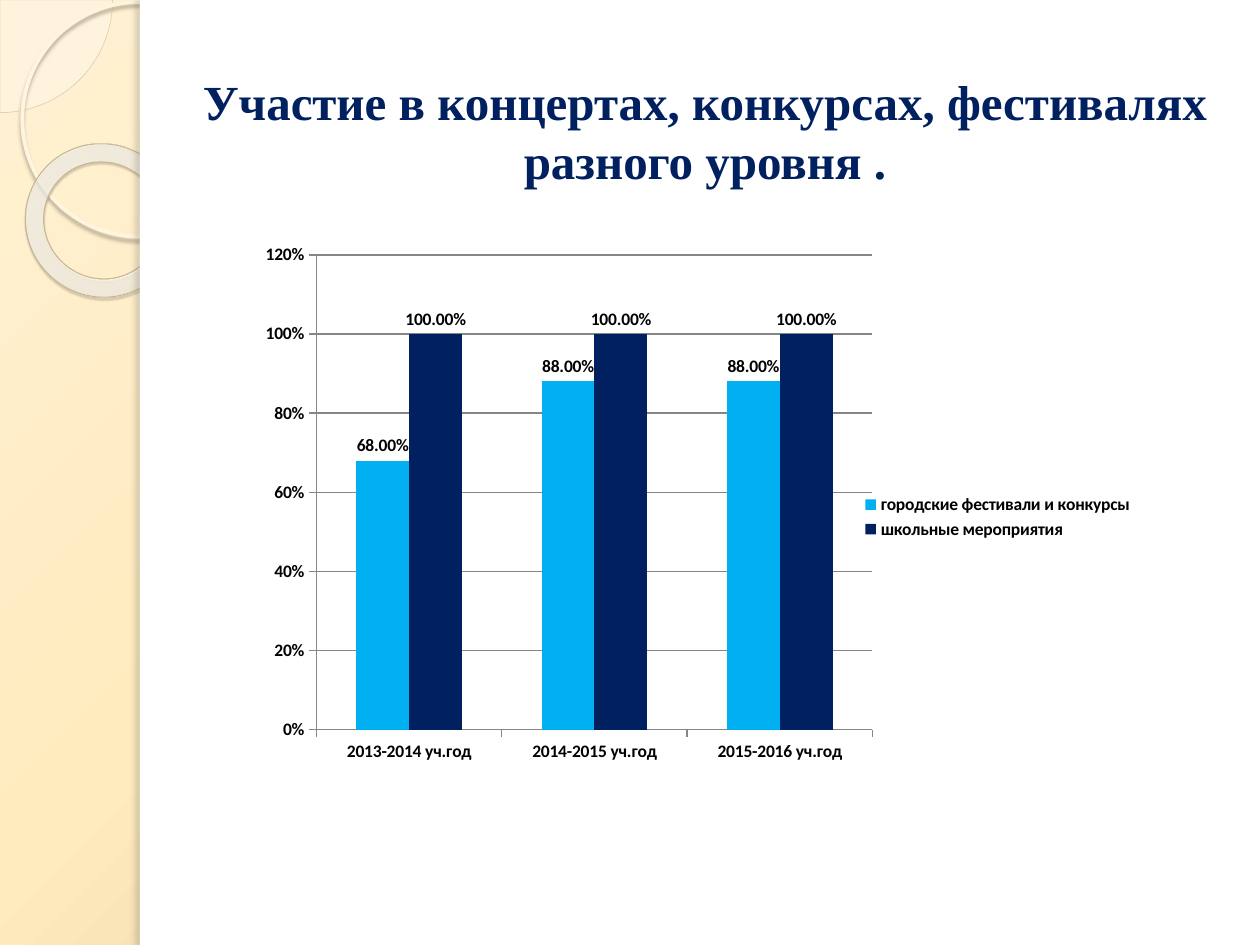
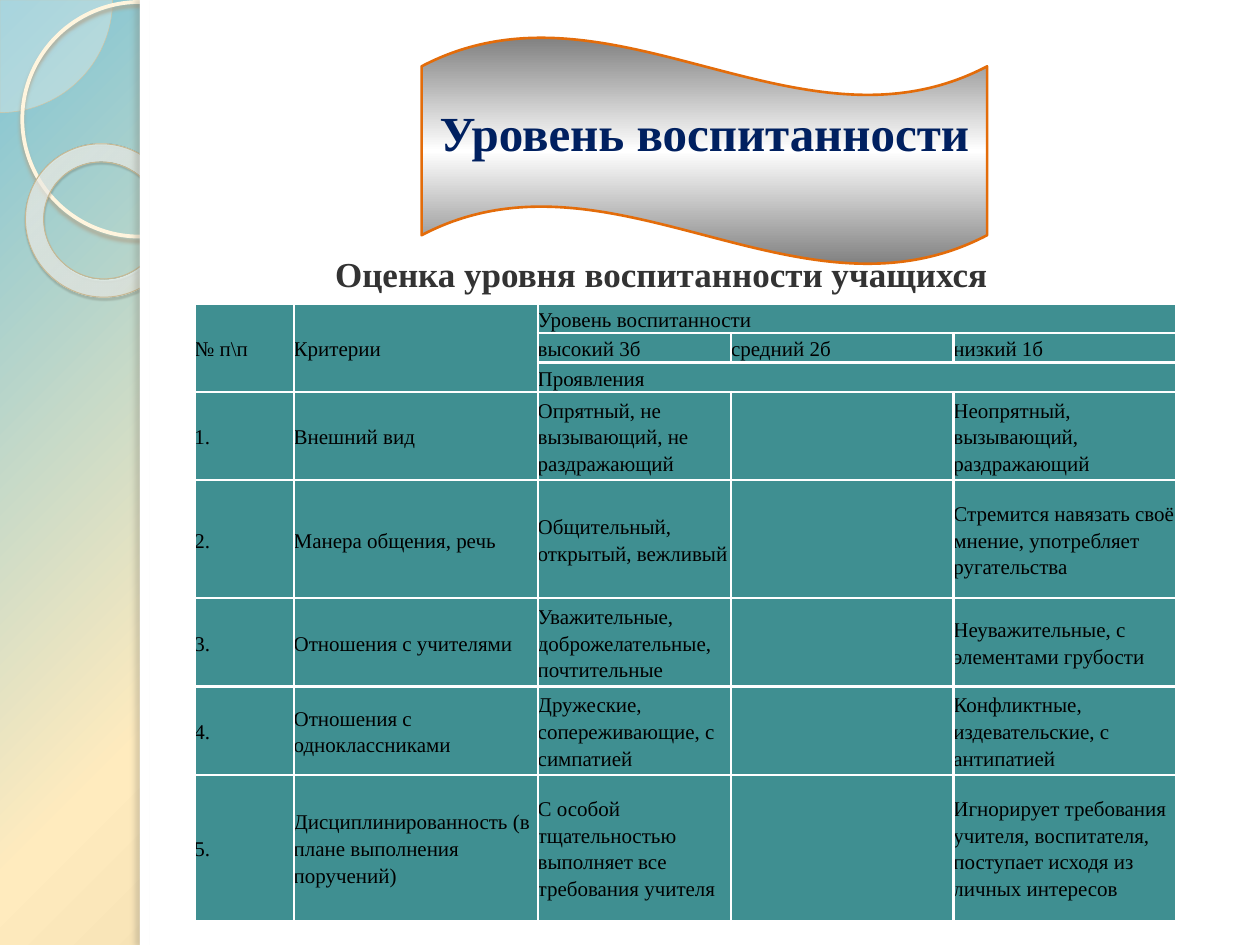
from lxml import etree
from pptx import Presentation
from pptx.chart.data import CategoryChartData
from pptx.dml.color import RGBColor
from pptx.enum.chart import XL_CHART_TYPE as ChartType, XL_LABEL_POSITION as LabelPosition
from pptx.enum.chart import XL_LEGEND_POSITION as LegendPosition, XL_TICK_MARK as TickMark
from pptx.enum.shapes import MSO_SHAPE as Preset
from pptx.enum.text import MSO_ANCHOR as Anchor, MSO_AUTO_SIZE as AutoSize, PP_ALIGN as Align
from pptx.oxml import parse_xml
from pptx.oxml.ns import nsdecls, qn
from pptx.util import Cm, Pt

COLORS = {
    "navy": "002060", "sky": "00B0F0", "black": "000000", "white": "FFFFFF",
    "heading": "333333", "teal": "3F8F91", "orange": "E36C0A", "steel": "808080",
    "grid": "868686", "cream": "FEFAF4", "sand": "D3C39F", "ring": "FFF5DE",
    "ring_shadow": "B0A68F", "donut_line": "C7B893", "donut_shadow": "5A5444",
    "strip_shadow": "736F63", "warm": "FFF1D3", "cool": "7EC3D4",
    "amber": "FFEBBE", "khaki": "C9B484", "glow": "FFFCF6", "pearl": "FFFEFB",
    "honey": "F0D28E",
}
SERIF = "Times New Roman"
SANS = "Calibri"
TITLE_ONLY = 5
SLIDE_SIZE = (25.4, 19.05)

YEARS = ["2013-2014 уч.год", "2014-2015 уч.год", "2015-2016 уч.год"]
SERIES = [
    ("городские фестивали и конкурсы", (0.68, 0.88, 0.88), "sky"),
    ("школьные мероприятия", (1, 1, 1), "navy"),
]
COLUMN_WIDTHS = [2, 4.92, 3.9, 4.48, 4.48]
ROW_HEIGHTS = [0.59, 0.59, 0.59, 1.78, 2.38, 1.78, 1.78, 2.94]
HEADER_SPANS = [((0, 0), (2, 0)), ((0, 1), (2, 1)), ((0, 2), (0, 4)), ((2, 2), (2, 4))]
HEADER = [
    ("№ п\\п", "Критерии", "Уровень воспитанности", "", ""),
    ("", "", "высокий 3б", "средний 2б", "низкий 1б"),
    ("", "", "Проявления", "", ""),
]
CRITERIA = [
    ("Внешний вид", "Опрятный, не вызывающий, не раздражающий",
     "Неопрятный, вызывающий, раздражающий"),
    ("Манера общения, речь", "Общительный, открытый, вежливый",
     "Стремится навязать своё мнение, употребляет ругательства"),
    ("Отношения с учителями", "Уважительные, доброжелательные, почтительные",
     "Неуважительные, с элементами грубости"),
    ("Отношения с одноклассниками", "Дружеские, сопереживающие, с симпатией",
     "Конфликтные, издевательские, с антипатией"),
    ("Дисциплинированность (в плане выполнения поручений)",
     "С особой тщательностью выполняет все требования учителя",
     "Игнорирует требования учителя, воспитателя, поступает исходя из личных интересов"),
]


def rgb(name):
    return RGBColor.from_string(COLORS[name])


def box(*lengths):
    return [Cm(length) for length in lengths]


def style_font(font, size, color, name=SERIF, bold=False):
    font.size, font.name, font.bold = Pt(size), name, bold
    font.color.rgb = rgb(color)


def replace_fill(properties, stops, direction):
    stop_xml = "".join(
        f'<a:gs pos="{position * 1000}"><a:srgbClr val="{COLORS[color]}">'
        f'<a:alpha val="{alpha * 1000}"/></a:srgbClr></a:gs>'
        for position, color, alpha in stops)
    gradient = parse_xml(f'<a:gradFill {nsdecls("a")} rotWithShape="1">'
                         f'<a:gsLst>{stop_xml}</a:gsLst>{direction}</a:gradFill>')
    solid = properties.find(qn("a:solidFill"))
    properties.replace(solid, gradient)


def circle_path(left, top, right, bottom):
    return (f'<a:path path="circle"><a:fillToRect l="{left * 1000}" t="{top * 1000}" '
            f'r="{right * 1000}" b="{bottom * 1000}"/></a:path>')


def add_preset(slide, preset, place, fill=None, line=None, width=0, adjustments=()):
    shape = slide.shapes.add_shape(preset, *box(*place))
    shape.shadow.inherit = False
    for index, value in enumerate(adjustments):
        shape.adjustments[index] = value
    if fill:
        shape.fill.solid()
        shape.fill.fore_color.rgb = rgb(fill)
    else:
        shape.fill.background()
    if line:
        shape.line.color.rgb = rgb(line)
        shape.line.width = Pt(width)
    else:
        shape.line.fill.background()
    return shape


def add_shadow(shape, color, alpha, blur, distance, angle):
    effects = shape.element.spPr.find(qn("a:effectLst"))
    effects.append(parse_xml(
        f'<a:outerShdw {nsdecls("a")} blurRad="{Pt(blur)}" dist="{Pt(distance)}" '
        f'dir="{angle * 60000}" algn="ctr" rotWithShape="0">'
        f'<a:srgbClr val="{COLORS[color]}"><a:alpha val="{alpha * 1000}"/></a:srgbClr>'
        f'</a:outerShdw>'))


def build_side_band(slide):
    pie = add_preset(slide, Preset.PIE, (-2.27, -2.27, 4.54, 4.54), "cream", "sand", 0.25, (0, 54))
    pie_color = pie.element.spPr.find(qn("a:solidFill"))[0]
    etree.SubElement(pie_color, qn("a:alpha"), val="33000")

    ring = add_preset(slide, Preset.OVAL, (0.45, 0.04, 4.73, 4.73), line="ring", width=2.15)
    add_shadow(ring, "ring_shadow", 85, 2, 2, 90)

    donut = add_preset(slide, Preset.DONUT, (0.5, 2.91, 3.13, 3.07), "glow",
                       "donut_line", 0.58, (0.12,))
    donut.rotation = 38.6
    replace_fill(donut.element.spPr, [(0, "glow", 70), (70, "pearl", 55), (100, "honey", 60)],
                 circle_path(-408, -50, 508, 150))
    add_shadow(donut, "donut_shadow", 35, 1, 1.2, 75)

    panel = add_preset(slide, Preset.RECTANGLE, (2.82, 0, 22.58, 19.05), "white")
    strip = add_preset(slide, Preset.RECTANGLE, (2.82, 0, 0.2, 19.05), "white")
    add_shadow(strip, "strip_shadow", 25, 3, 3, 180)
    return [pie, ring, donut, panel, strip]


def move_to_layout(shapes, layout):
    for placeholder in list(layout.placeholders)[1:]:
        placeholder.element.getparent().remove(placeholder.element)
    tree = layout.element.cSld.spTree
    for index, shape in enumerate(shapes, start=2):
        tree.insert(index, shape.element)


def set_background(slide, corner):
    slide.background.fill.solid()
    replace_fill(slide.element.find(".//" + qn("p:bgPr")),
                 [(0, corner, 100), (40, "amber", 100), (100, "khaki", 100)],
                 circle_path(-24, -20, 124, 120))


def set_title(slide, text, place, size, color, align):
    title = slide.shapes.title
    title.left, title.top, title.width, title.height = box(*place)
    frame = title.text_frame
    frame.text = text
    frame.word_wrap = True
    frame.auto_size = AutoSize.NONE
    frame.vertical_anchor = Anchor.MIDDLE
    paragraph = frame.paragraphs[0]
    paragraph.alignment = align
    style_font(paragraph.font, size, color, bold=True)


def set_plot_area(chart, **fractions):
    area = chart.element.find(".//" + qn("c:plotArea"))
    for layout in area.findall(qn("c:layout")):
        area.remove(layout)
    sizes = "".join(f'<c:{key} val="{value}"/>' for key, value in fractions.items())
    area.insert(0, parse_xml(
        f'<c:layout {nsdecls("c")}><c:manualLayout><c:layoutTarget val="inner"/>'
        f'<c:xMode val="edge"/><c:yMode val="edge"/>{sizes}</c:manualLayout></c:layout>'))


def add_participation_chart(slide, place):
    data = CategoryChartData(number_format="0.00%")
    data.categories = YEARS
    for name, values, _ in SERIES:
        data.add_series(name, values)
    chart = slide.shapes.add_chart(ChartType.COLUMN_CLUSTERED, *box(*place), data).chart
    style_font(chart.font, 10, "black", SANS, True)
    chart.has_title = False
    chart.has_legend = True
    chart.legend.position = LegendPosition.RIGHT
    chart.legend.include_in_layout = False

    plot = chart.plots[0]
    plot.gap_width, plot.overlap, plot.vary_by_categories = 150, 0, False
    for series, (_, _, color) in zip(plot.series, SERIES):
        series.format.fill.solid()
        series.format.fill.fore_color.rgb = rgb(color)
        labels = series.data_labels
        labels.show_value = True
        labels.number_format, labels.number_format_is_linked = "0.00%", False
        labels.position = LabelPosition.OUTSIDE_END

    values = chart.value_axis
    values.minimum_scale, values.maximum_scale, values.major_unit = 0, 1.2, 0.2
    values.tick_labels.number_format = "0%"
    values.tick_labels.number_format_is_linked = False
    values.has_major_gridlines = True
    values.major_gridlines.format.line.color.rgb = rgb("grid")
    for axis in (values, chart.category_axis):
        axis.major_tick_mark = TickMark.OUTSIDE
        axis.format.line.color.rgb = rgb("grid")
    set_plot_area(chart, x=0.12, y=0.02, w=0.59, h=0.87)


def add_wave_banner(slide, text, place):
    wave = add_preset(slide, Preset.WAVE, place, "steel", "orange", 1.5, (0.13, 0))
    replace_fill(wave.element.spPr, [(0, "steel", 100), (50, "white", 100), (100, "steel", 100)],
                 '<a:lin ang="5400000" scaled="0"/>')
    frame = wave.text_frame
    frame.text = text
    frame.word_wrap = True
    frame.vertical_anchor = Anchor.TOP
    paragraph = frame.paragraphs[0]
    paragraph.alignment = Align.CENTER
    style_font(paragraph.font, 28, "navy", bold=True)


def format_cell(cell, text):
    cell.text = text
    cell.margin_left = cell.margin_right = cell.margin_top = cell.margin_bottom = 0
    cell.vertical_anchor = Anchor.MIDDLE
    cell.fill.solid()
    cell.fill.fore_color.rgb = rgb("teal")
    paragraph = cell.text_frame.paragraphs[0]
    paragraph.line_spacing = 1.15
    style_font(paragraph.font, 12, "black")
    properties = cell._tc.get_or_add_tcPr()
    for index, side in enumerate("LRTB"):
        properties.insert(index, parse_xml(
            f'<a:ln{side} {nsdecls("a")} w="{Pt(1.5)}"><a:solidFill>'
            f'<a:srgbClr val="{COLORS["white"]}"/></a:solidFill></a:ln{side}>'))


def add_criteria_table(slide, left, top):
    rows = HEADER + [(f"{number}.", criterion, high, "", low)
                     for number, (criterion, high, low) in enumerate(CRITERIA, start=1)]
    place = box(left, top, sum(COLUMN_WIDTHS), sum(ROW_HEIGHTS))
    table = slide.shapes.add_table(len(rows), len(COLUMN_WIDTHS), *place).table
    for column, width in zip(table.columns, COLUMN_WIDTHS):
        column.width = Cm(width)
    for row, height, texts in zip(table.rows, ROW_HEIGHTS, rows):
        row.height = Cm(height)
        for cell, text in zip(row.cells, texts):
            format_cell(cell, text)
    for first, last in HEADER_SPANS:
        table.cell(*first).merge(table.cell(*last))


def main():
    presentation = Presentation()
    presentation.slide_width, presentation.slide_height = box(*SLIDE_SIZE)
    layout = presentation.slide_layouts[TITLE_ONLY]

    events = presentation.slides.add_slide(layout)
    move_to_layout(build_side_band(events), layout)
    set_background(events, "warm")
    set_title(events, "Участие в концертах, конкурсах, фестивалях разного уровня .",
              (3.5, 0.71, 21.42, 3.84), 28, "navy", Align.CENTER)
    add_participation_chart(events, (4.1, 4.92, 19, 11))

    conduct = presentation.slides.add_slide(layout)
    set_background(conduct, "cool")
    set_title(conduct, "Оценка уровня воспитанности учащихся",
              (6.5, 4.91, 14.4, 1.2), 20, "heading", Align.LEFT)
    add_wave_banner(conduct, "Уровень воспитанности", (8.5, 0.74, 11.4, 4.6))
    add_criteria_table(conduct, 3.92, 6.13)
    heading = conduct.shapes.title.element
    heading.getparent().append(heading)

    presentation.save("out.pptx")


if __name__ == "__main__":
    main()
